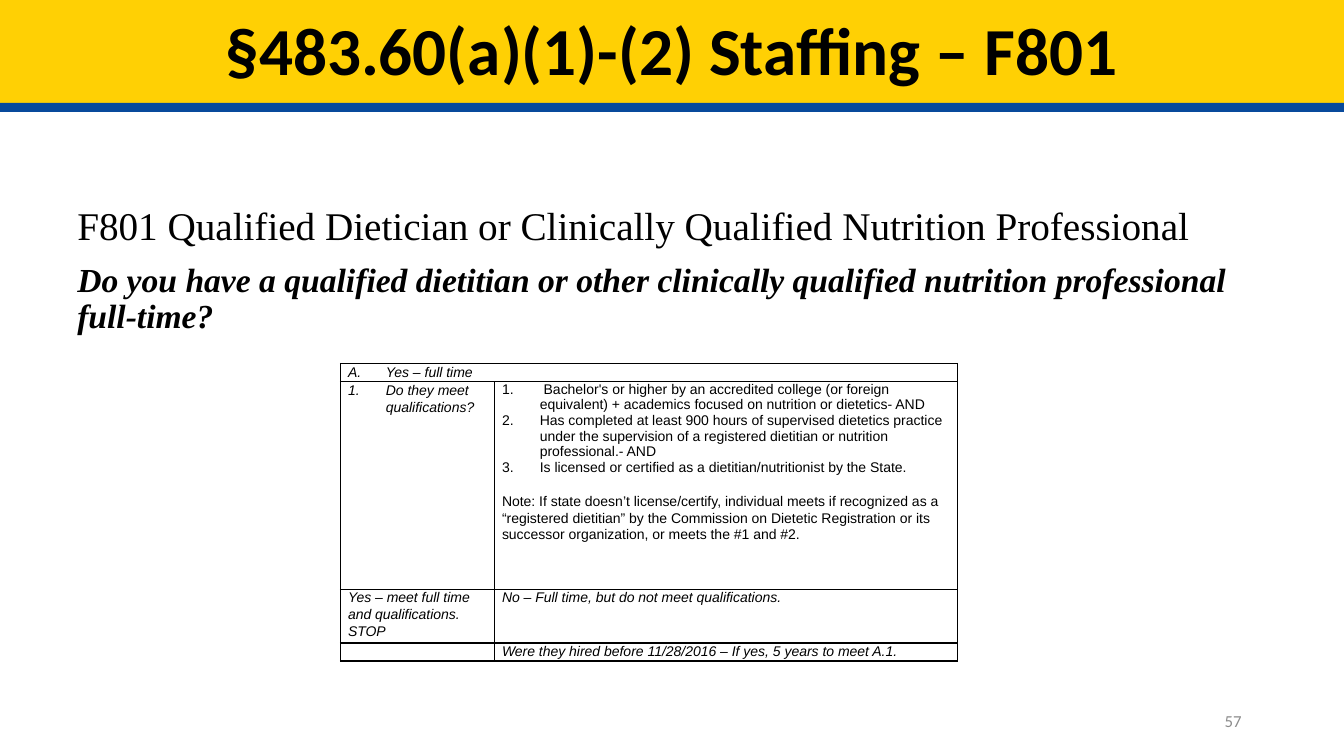
from lxml.etree import SubElement
from pptx import Presentation
from pptx.dml.color import RGBColor
from pptx.enum.shapes import MSO_SHAPE as Preset
from pptx.enum.text import MSO_ANCHOR as Anchor, MSO_AUTO_SIZE as AutoSize, PP_ALIGN as Align
from pptx.oxml.ns import qn
from pptx.util import Pt

# Content
TITLE = "§483.60(a)(1)-(2) Staffing – F801"
HEADING = "F801 Qualified Dietician or Clinically Qualified Nutrition Professional"
QUESTION = ("Do you have a qualified dietitian or other clinically qualified "
            "nutrition professional full-time?")
PAGE_NUMBER = "57"
LETTER, NUMBER = "alphaUcPeriod", "arabicPeriod"
PLAIN = dict(italic=False)
REQUIREMENT = dict(italic=False, numbering=NUMBER, line_spacing=1)
# Each cell is a list of (text, format) paragraphs
ROWS = [
    [[("Yes – full time", dict(numbering=LETTER))], []],
    [[("Do they meet qualifications?", dict(numbering=NUMBER))],
     [(" Bachelor's or higher by an accredited college (or foreign equivalent) + "
       "academics focused on nutrition or dietetics- AND", REQUIREMENT),
      ("Has completed at least 900 hours of supervised dietetics practice under the "
       "supervision of a registered dietitian or nutrition professional.- AND", REQUIREMENT),
      ("Is licensed or certified as a dietitian/nutritionist by the State.", REQUIREMENT),
      ("Note: If state doesn’t license/certify, individual meets if recognized as a "
       "“registered dietitian” by the Commission on Dietetic Registration or its "
       "successor organization, or meets the #1 and #2.", dict(PLAIN, before=12.3))]],
    [[("Yes – meet full time and qualifications. STOP", {})],
     [("No – Full time, but do not meet qualifications.", {})]],
    [[], [("Were they hired before 11/28/2016 – If yes, 5 years to meet A.1.", {})]],
]

# Theme and layout, in points
THEME = dict(
    yellow="FFD004", blue="084A9C", black="000000", gray="8C8C8C",
    title_font="Calibri", body_font="Times New Roman", table_font="Arial",
    title_size=48, heading_size=28, question_size=24, table_size=10, page_size=12,
)
SLIDE_WIDTH, SLIDE_HEIGHT = 960, 540
YELLOW_HEIGHT, BLUE_HEIGHT = 73.5, 6.5
TABLE_LEFT, TABLE_TOP = 243.2, 259.7
COLUMN_WIDTHS = [110, 330.6]
ROW_HEIGHTS = [12.9, 148.3, 38.4, 12.9]
NUMBER_INDENT = 27


def color(name):
    return RGBColor.from_string(THEME[name])


def write(paragraph, text, *, font, size, ink="black", bold=False, italic=False,
          align=Align.LEFT, line_spacing=1, before=0, numbering=None):
    paragraph.alignment = align
    paragraph.line_spacing = line_spacing
    paragraph.space_before, paragraph.space_after = Pt(before), Pt(0)
    properties = paragraph._p.get_or_add_pPr()
    indent = NUMBER_INDENT if numbering else 0
    properties.set("marL", str(Pt(indent)))
    properties.set("indent", str(Pt(-indent)))
    if numbering:
        SubElement(properties, qn("a:buAutoNum"), type=numbering)
    else:
        SubElement(properties, qn("a:buNone"))
    run = paragraph.add_run()
    run.text = text
    run.font.name, run.font.size = THEME[font], Pt(THEME[size])
    run.font.bold, run.font.italic = bold, italic
    run.font.color.rgb = color(ink)


def place(shape, left, top, width, height):
    shape.left, shape.top, shape.width, shape.height = map(Pt, (left, top, width, height))
    shape.text_frame.auto_size = AutoSize.NONE
    shape.text_frame.word_wrap = True


def write_all(text_frame, entries, **defaults):
    for index, (text, options) in enumerate(entries):
        paragraph = text_frame.add_paragraph() if index else text_frame.paragraphs[0]
        write(paragraph, text, **{**defaults, **options})


def add_borders(cell):
    properties = cell._tc.get_or_add_tcPr()
    for side in ("lnL", "lnR", "lnT", "lnB"):
        line = SubElement(properties, qn(f"a:{side}"), w=str(Pt(1)))
        fill = SubElement(line, qn("a:solidFill"))
        SubElement(fill, qn("a:srgbClr"), val=THEME["black"])


def add_banner(slide):
    bands = [("yellow", 0, YELLOW_HEIGHT), ("blue", YELLOW_HEIGHT, BLUE_HEIGHT)]
    for index, (name, top, height) in enumerate(bands):
        band = slide.shapes.add_shape(Preset.RECTANGLE, 0, Pt(top), Pt(SLIDE_WIDTH), Pt(height))
        band.shadow.inherit = False
        band.fill.solid()
        band.fill.fore_color.rgb = color(name)
        band.line.fill.background()
        # Keep the bands behind the title
        slide.shapes._spTree.insert(2 + index, band._element)


def add_staffing_table(slide):
    table = slide.shapes.add_table(
        len(ROWS), len(COLUMN_WIDTHS), Pt(TABLE_LEFT), Pt(TABLE_TOP),
        Pt(sum(COLUMN_WIDTHS)), Pt(sum(ROW_HEIGHTS))).table
    table.first_row = table.horz_banding = False
    for column, width in zip(table.columns, COLUMN_WIDTHS):
        column.width = Pt(width)
    for row, height, contents in zip(table.rows, ROW_HEIGHTS, ROWS):
        row.height = Pt(height)
        for cell, entries in zip(row.cells, contents):
            cell.margin_left = cell.margin_right = Pt(5.4)
            cell.margin_top = cell.margin_bottom = 0
            add_borders(cell)
            cell.fill.background()
            write_all(cell.text_frame, entries, font="table_font", size="table_size",
                      italic=True, line_spacing=1.07)
            if not entries:
                # An empty cell keeps the small type so its row stays low
                SubElement(cell.text_frame.paragraphs[0]._p, qn("a:endParaRPr"),
                           sz=str(THEME["table_size"] * 100))
    table.cell(0, 0).merge(table.cell(0, 1))


def main():
    presentation = Presentation()
    presentation.slide_width, presentation.slide_height = Pt(SLIDE_WIDTH), Pt(SLIDE_HEIGHT)
    slide = presentation.slides.add_slide(presentation.slide_layouts[1])
    add_banner(slide)

    # Title
    title = slide.shapes.title
    place(title, 0, 10.8, SLIDE_WIDTH, 54.7)
    title.text_frame.vertical_anchor = Anchor.MIDDLE
    write_all(title.text_frame, [(TITLE, {})], font="title_font", size="title_size",
              bold=True, align=Align.CENTER, line_spacing=0.9)

    # Heading and question
    body = slide.placeholders[1]
    place(body, 48, 144, 864, 338.4)
    body.text_frame.vertical_anchor = Anchor.TOP
    write_all(body.text_frame,
              [(HEADING, dict(size="heading_size")),
               (QUESTION, dict(size="question_size", bold=True, italic=True))],
              font="body_font", line_spacing=0.9, before=10)

    add_staffing_table(slide)

    # Page number
    page = slide.shapes.add_textbox(0, 0, 0, 0)
    place(page, 678, 500.5, 216, 28.8)
    page.text_frame.vertical_anchor = Anchor.MIDDLE
    write_all(page.text_frame, [(PAGE_NUMBER, {})], font="title_font", size="page_size",
              ink="gray", align=Align.RIGHT)

    presentation.save("out.pptx")


if __name__ == "__main__":
    main()
